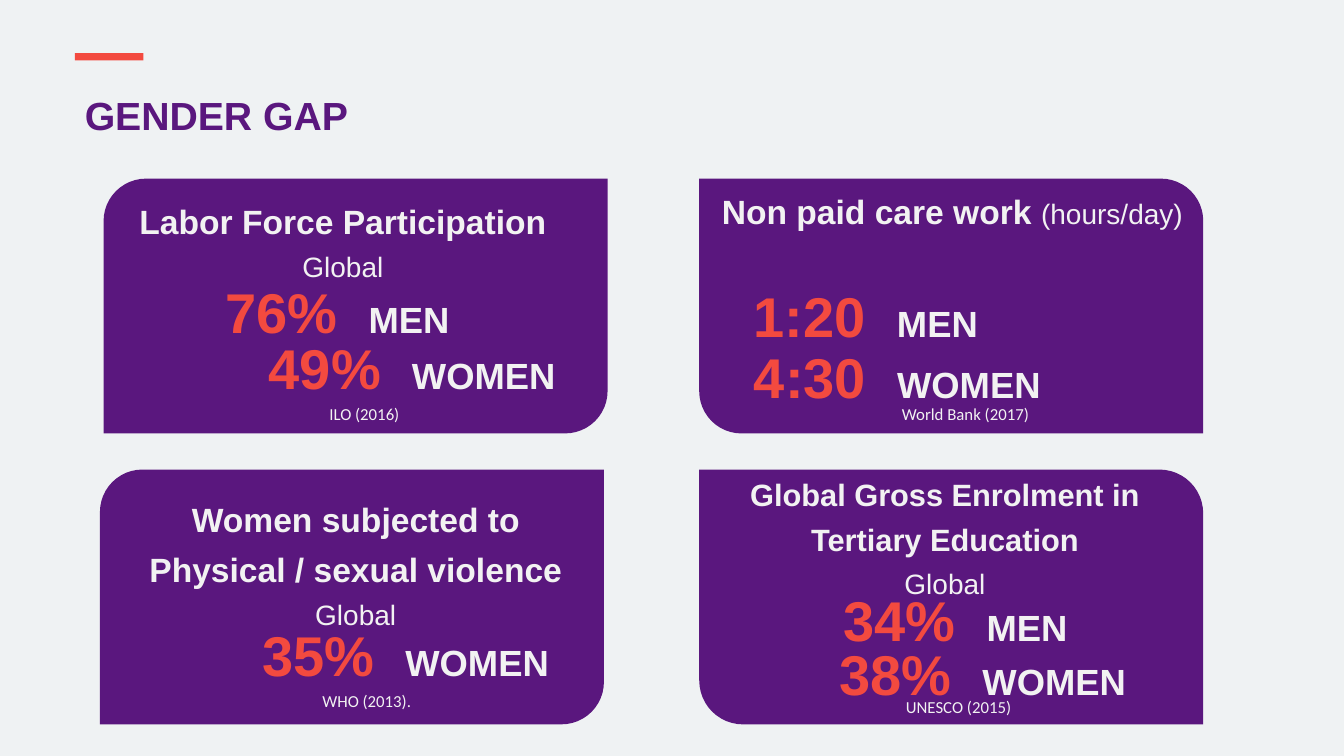
import dataclasses

import lxml.etree
import pptx
import pptx.dml.color
import pptx.enum.shapes
import pptx.enum.text
import pptx.oxml.ns
import pptx.util

Pt = pptx.util.Pt
SHAPES = pptx.enum.shapes.MSO_SHAPE
CENTER = pptx.enum.text.PP_ALIGN.CENTER
LEFT = pptx.enum.text.PP_ALIGN.LEFT


@dataclasses.dataclass(frozen=True)
class Theme:
    background: str = "EFF2F3"
    purple: str = "5A177E"
    coral: str = "F34A3F"
    light: str = "F2F2F2"
    heading_font: str = "Arial"
    source_font: str = "Calibri"
    title: int = 28
    heading: int = 24
    long_heading: int = 22
    subheading: int = 20
    value: int = 40
    label: int = 26
    source: int = 12


THEME = Theme()
LABEL_TAB = 102.25


def apply_format(target, values):
    for name, value in values.items():
        setattr(target, name, value)


def paint(fill, color):
    fill.solid()
    fill.fore_color.rgb = pptx.dml.color.RGBColor.from_string(color)


def add_block(slide, kind, box, color, corners=()):
    shape = slide.shapes.add_shape(kind, *map(Pt, box))
    shape.shadow.inherit = False
    paint(shape.fill, color)
    shape.line.fill.background()
    for index, corner in enumerate(corners):
        shape.adjustments[index] = corner


def add_text_box(slide, box, wrap=True, **frame_format):
    frame = slide.shapes.add_textbox(*map(Pt, box)).text_frame
    apply_format(frame, {
        "word_wrap": wrap,
        "auto_size": pptx.enum.text.MSO_AUTO_SIZE.SHAPE_TO_FIT_TEXT,
        **frame_format,
    })
    return frame


def add_run(paragraph, text, size, color=THEME.light, bold=True, name=THEME.heading_font):
    run = paragraph.add_run()
    run.text = text
    apply_format(run.font, {"size": Pt(size), "bold": bold, "name": name})
    run.font.color.rgb = pptx.dml.color.RGBColor.from_string(color)


def add_heading(slide, box, lines, line_spacing=None):
    frame = add_text_box(slide, box)
    for index, runs in enumerate(lines):
        paragraph = frame.add_paragraph() if index else frame.paragraphs[0]
        apply_format(paragraph, {"alignment": CENTER, "space_before": Pt(6)})
        if line_spacing and index == 0:
            paragraph.line_spacing = Pt(line_spacing)
        for text, size, bold in runs:
            add_run(paragraph, text, size, bold=bold)


def add_statistic(slide, left, top, width, text_left, value, label):
    frame = add_text_box(slide, (left, top, width, 55.4),
                         margin_left=Pt(text_left - left), margin_right=0)
    paragraph = frame.paragraphs[0]
    paragraph.alignment = LEFT
    qualify = pptx.oxml.ns.qn
    properties = paragraph._p.get_or_add_pPr()
    tabs = lxml.etree.SubElement(properties, qualify("a:tabLst"))
    lxml.etree.SubElement(tabs, qualify("a:tab"), pos=str(Pt(LABEL_TAB)), algn="l")
    add_run(paragraph, value + "\t", THEME.value, THEME.coral)
    add_run(paragraph, label, THEME.label)


def add_source(slide, left, top, width, text, wrap=False, alignment=LEFT):
    paragraph = add_text_box(slide, (left, top, width, 21.8), wrap).paragraphs[0]
    paragraph.alignment = alignment
    add_run(paragraph, text, THEME.source, bold=False, name=THEME.source_font)


def add_title(slide, text):
    add_block(slide, SHAPES.RECTANGLE, (53.5, 37.9, 48.9, 5.2), THEME.coral)
    frame = add_text_box(slide, (53.5, 61.5, 815, 41.2))
    add_run(frame.paragraphs[0], text, THEME.title, THEME.purple)


def main():
    presentation = pptx.Presentation()
    apply_format(presentation, {"slide_width": Pt(960), "slide_height": Pt(540)})
    slide = presentation.slides.add_slide(presentation.slide_layouts[6])
    paint(slide.background.fill, THEME.background)

    for left, top, corners in (
        (74, 127.6, (0.1667, 0)),
        (499.5, 127.6, (0, 0.166)),
        (71.4, 335.4, (0.1667, 0)),
        (499.5, 335.4, (0, 0.172)),
    ):
        add_block(slide, SHAPES.ROUND_2_DIAG_RECTANGLE,
                  (left, top, 360, 182), THEME.purple, corners)

    add_title(slide, "GENDER GAP")

    global_line = [("Global", THEME.subheading, False)]
    add_heading(slide, (51, 139.7, 388, 67), [
        [("Labor Force Participation", THEME.heading, True)], global_line])
    add_heading(slide, (501, 132.5, 358.6, 36), [
        [("Non paid care work ", THEME.heading, True),
         ("(hours/day)", THEME.subheading, False)]])
    add_heading(slide, (88.6, 345.6, 331, 110), [
        [("Women subjected to Physical / sexual violence", THEME.heading, True)],
        global_line], line_spacing=35.8)
    add_heading(slide, (490.3, 336.2, 369.4, 97), [
        [("Global Gross Enrolment in", THEME.long_heading, True)],
        [("Tertiary Education", THEME.long_heading, True)], global_line])

    for statistic in (
        (40.3, 194.4, 316.8, 161, "76%", "MEN"),
        (87.1, 234.7, 316.8, 192, "49%", "WOMEN"),
        (531.4, 197.3, 316.8, 538.6, "1:20", "MEN"),
        (434.9, 241.2, 316.8, 538.6, "4:30", "WOMEN"),
        (83.5, 439.9, 316.8, 187.3, "35%", "WOMEN"),
        (466.6, 414.7, 303, 602.5, "34%", "MEN"),
        (508.3, 453.6, 303, 599.5, "38%", "WOMEN"),
    ):
        add_statistic(slide, *statistic)

    add_source(slide, 228.2, 285.1, 68.4, "ILO (2016)")
    add_source(slide, 637.2, 285.1, 106.6, "World Bank (2017)")
    add_source(slide, 223.2, 489.6, 78.5, "WHO (2013).")
    add_source(slide, 618.5, 493.9, 132.5, "UNESCO (2015)", True, CENTER)

    presentation.save("out.pptx")


if __name__ == "__main__":
    main()
